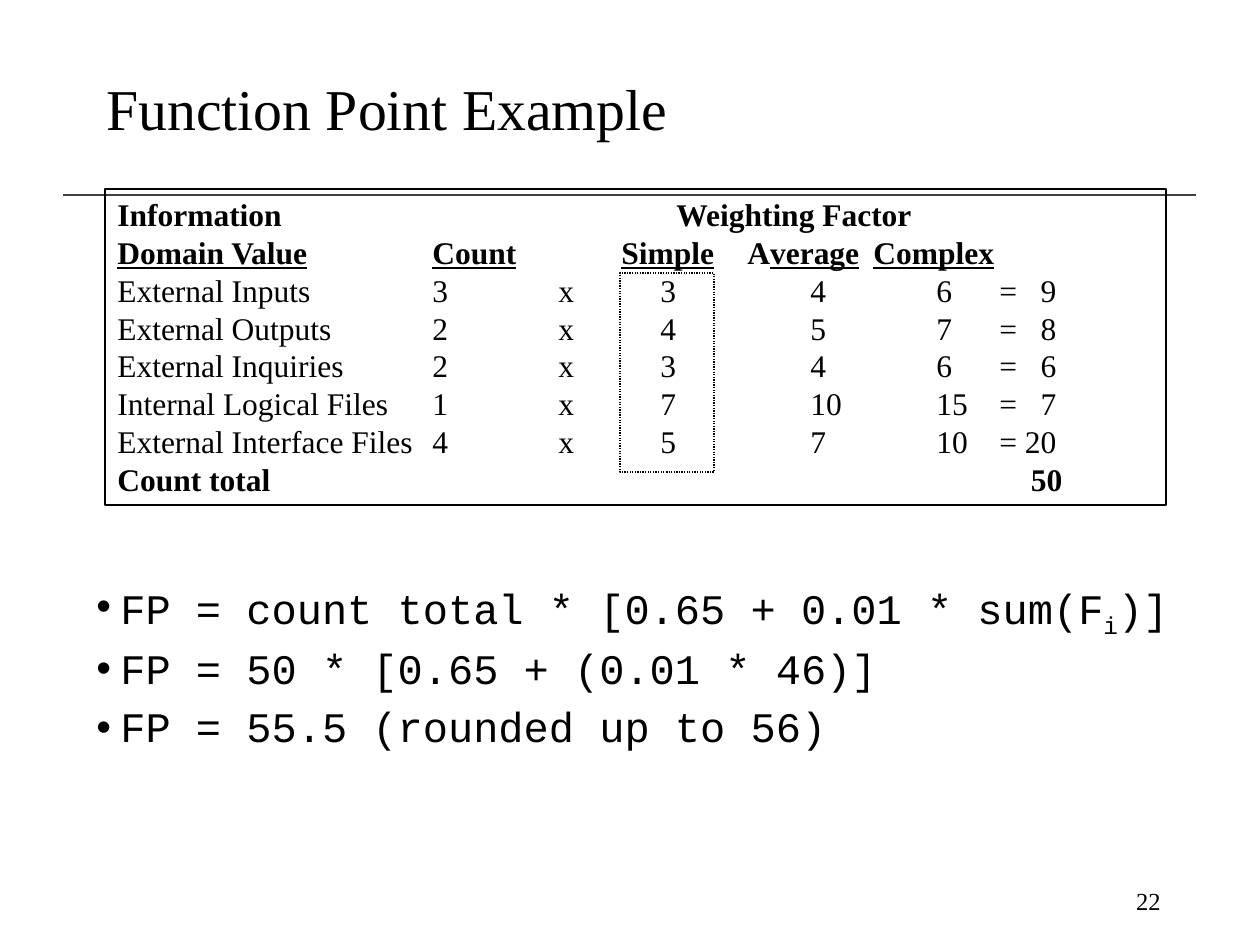
from dataclasses import dataclass

import pptx
import pptx.dml.color
import pptx.enum.dml
import pptx.enum.shapes
import pptx.enum.text
import pptx.oxml
import pptx.oxml.ns
import pptx.util
from lxml import etree

PX = 914400 // 126
COLORS = {"text": "000000", "rule": "404040"}
SERIF, MONO = "Times New Roman", "Courier New"
ALIGN = pptx.enum.text.PP_ALIGN
ANCHOR = pptx.enum.text.MSO_ANCHOR


@dataclass(frozen=True)
class Span:
    text: str
    bold: bool = False
    underline: bool = False
    baseline: int = 0


@dataclass(frozen=True)
class Tab:
    at: int
    align: str = "l"


@dataclass(frozen=True)
class Domain:
    name: str
    count: int
    simple: int
    average: int
    complex: int

    def line(self) -> str:
        cells = (self.name, self.count, "x", self.simple, self.average,
                 self.complex, "=", self.count * self.simple)
        return "\t".join(str(cell) for cell in cells)


@dataclass(frozen=True)
class Frame:
    left: int
    top: int
    width: int
    height: int

    def emu(self) -> list[int]:
        return [n * PX for n in (self.left, self.top, self.width, self.height)]


DOMAINS = [
    Domain("External Inputs", 3, 3, 4, 6),
    Domain("External Outputs", 2, 4, 5, 7),
    Domain("External Inquiries", 2, 3, 4, 6),
    Domain("Internal Logical Files", 1, 7, 10, 15),
    Domain("External Interface Files", 4, 5, 7, 10),
]
GROUP_TABS = [Tab(559)]
HEADER_TABS = [Tab(315), Tab(504), Tab(630), Tab(756)]
DOMAIN_TABS = [Tab(315), Tab(441), Tab(543), Tab(693), Tab(819), Tab(882),
               Tab(939, "r")]
TOTAL_TABS = [Tab(945, "r")]


def color(name: str) -> pptx.dml.color.RGBColor:
    return pptx.dml.color.RGBColor.from_string(COLORS[name])


def add_child(parent, tag: str, **attributes):
    child = etree.SubElement(parent, pptx.oxml.ns.qn(tag))
    for name, value in attributes.items():
        child.set(name, str(value))
    return child


def write(frame, spans: list[Span], *, size: float, font: str = SERIF,
          align=ALIGN.LEFT, spacing=None, before: float = 0,
          bullet: int = 0, tabs: list[Tab] = ()) -> None:
    """Add one paragraph, filling the empty first one if it is free."""
    first = frame.paragraphs[0]
    para = frame.add_paragraph() if first.runs else first
    para.alignment = align
    if spacing:
        para.line_spacing = spacing
    para.space_before = pptx.util.Pt(before)
    settings = para._p.get_or_add_pPr()
    if bullet:
        settings.set("marL", str(bullet * PX))
        settings.set("indent", str(-bullet * PX))
        add_child(settings, "a:buFont", typeface="Arial")
        add_child(settings, "a:buChar", char="•")
    if tabs:
        stops = add_child(settings, "a:tabLst")
        for tab in tabs:
            add_child(stops, "a:tab", pos=tab.at * PX, algn=tab.align)
    for span in spans:
        run = para.add_run()
        run.text = span.text
        run.font.name = font
        run.font.size = pptx.util.Pt(size)
        run.font.bold = span.bold
        run.font.underline = span.underline
        run.font.color.rgb = color("text")
        if span.baseline:
            run.font._element.set("baseline", str(span.baseline * 1000))


def add_text_box(page, place: Frame, anchor=ANCHOR.TOP):
    box = page.shapes.add_textbox(*place.emu())
    box.text_frame.word_wrap = True
    box.text_frame.vertical_anchor = anchor
    return box.text_frame


def add_outline(page, place: Frame, dash=None):
    box = page.shapes.add_shape(
        pptx.enum.shapes.MSO_SHAPE.RECTANGLE, *place.emu())
    box.shadow.inherit = False
    box.fill.background()
    box.line.color.rgb = color("text")
    box.line.width = pptx.util.Pt(0.75)
    if dash:
        box.line.dash_style = dash
    return box.text_frame


def add_rule(page, left: int, right: int, y: int) -> None:
    rule = page.shapes.add_connector(
        pptx.enum.shapes.MSO_CONNECTOR.STRAIGHT,
        left * PX, y * PX, right * PX, y * PX)
    rule.line.color.rgb = color("rule")
    rule.line.width = pptx.util.Pt(1)
    add_child(rule._element.spPr, "a:effectLst")


def add_weights(page) -> None:
    frame = add_outline(page, Frame(105, 189, 1061, 316))
    frame.word_wrap = True
    frame.vertical_anchor = ANCHOR.TOP
    frame.auto_size = pptx.enum.text.MSO_AUTO_SIZE.SHAPE_TO_FIT_TEXT

    header = []
    for gap, label in (("", "Domain Value"), ("\t", "Count"), ("\t", "Simple"),
                       ("\tA", "verage"), ("\t", "Complex")):
        if gap:
            header.append(Span(gap, bold=True))
        header.append(Span(label, bold=True, underline=True))
    total = sum(domain.count * domain.simple for domain in DOMAINS)

    lines = [([Span("Information\tWeighting Factor", bold=True)], GROUP_TABS),
             (header, HEADER_TABS)]
    lines += [([Span(domain.line())], DOMAIN_TABS) for domain in DOMAINS]
    lines.append(([Span(f"Count total\t{total}", bold=True)], TOTAL_TABS))
    for spans, tabs in lines:
        write(frame, spans, size=18, spacing=pptx.util.Pt(21.6), tabs=tabs)


def main() -> None:
    deck = pptx.Presentation()
    deck.slide_width, deck.slide_height = 1260 * PX, 945 * PX
    page = deck.slides.add_slide(deck.slide_layouts[6])

    # Rule, page number and title
    add_rule(page, 63, 1196, 195)
    number = add_text_box(page, Frame(890, 876, 283, 50), ANCHOR.MIDDLE)
    write(number, [Span("22")], size=14, align=ALIGN.RIGHT)
    title = add_text_box(page, Frame(94, 33, 1071, 157), ANCHOR.MIDDLE)
    write(title, [Span("Function Point Example")], size=33, spacing=0.9)

    # Formula worked out in steps
    formula = add_text_box(page, Frame(84, 577, 1124, 231))
    for spans in (
        [Span("FP = count total * [0.65 + 0.01 * sum(F"),
         Span("i", baseline=-25), Span(")]")],
        [Span("FP = 50 * [0.65 + (0.01 * 46)]")],
        [Span("FP = 55.5 (rounded up to 56)")],
    ):
        write(formula, spans, size=24, font=MONO, spacing=0.9, before=7.5,
              bullet=24)

    # Weighting factors, with the chosen column marked
    add_outline(page, Frame(620, 273, 94, 199),
                pptx.enum.dml.MSO_LINE.ROUND_DOT)
    add_weights(page)

    deck.save("out.pptx")


if __name__ == "__main__":
    main()
